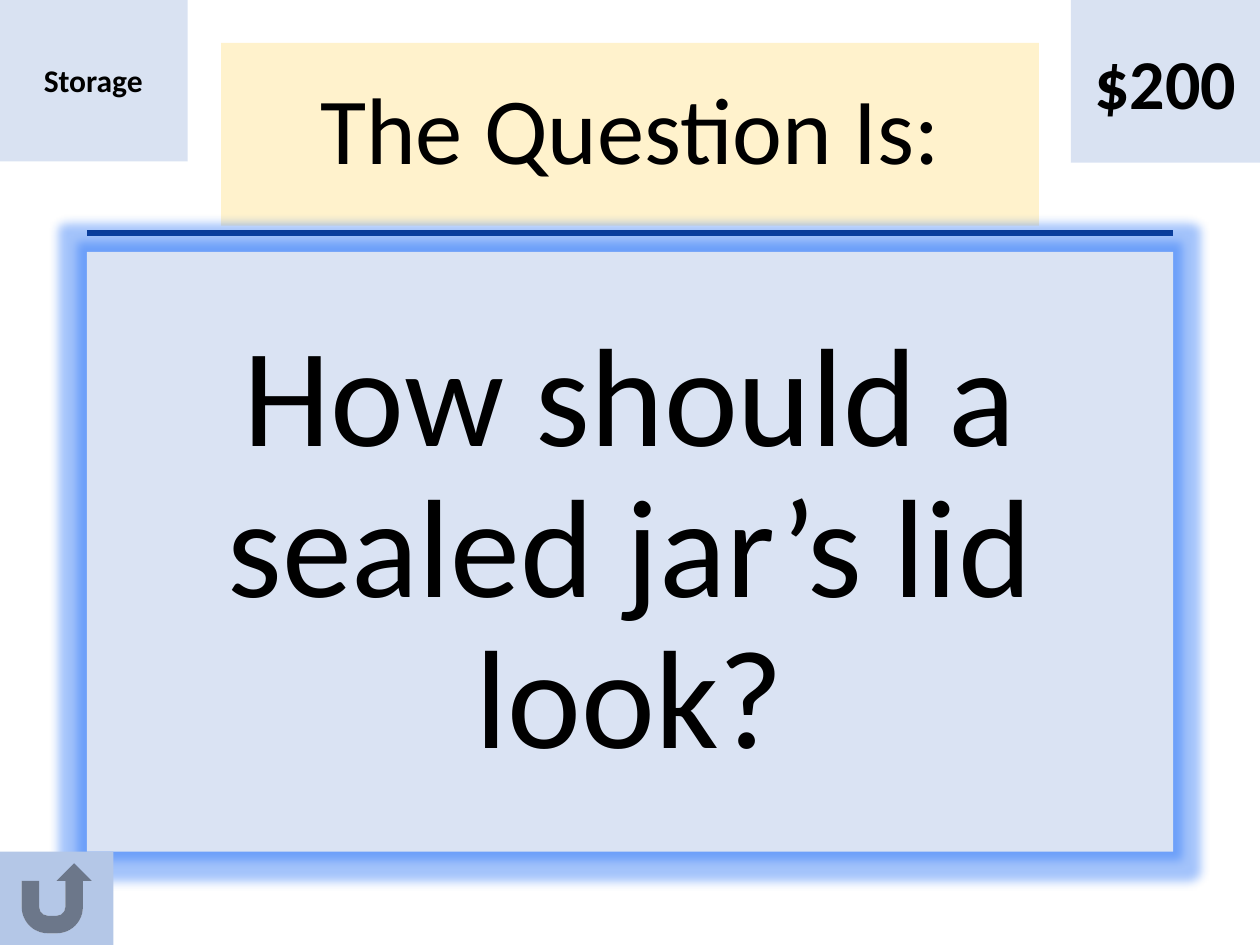
from lxml.etree import SubElement
from pptx import Presentation
from pptx.dml.color import RGBColor
from pptx.enum.shapes import MSO_CONNECTOR, MSO_SHAPE
from pptx.enum.text import MSO_ANCHOR, PP_ALIGN
from pptx.oxml.ns import qn
from pptx.util import Inches, Pt

NAVY = RGBColor(0x00, 0x20, 0x60)
CREAM = RGBColor(0xFF, 0xF2, 0xCC)
PALE_BLUE = RGBColor(0xDA, 0xE3, 0xF3)
BUTTON_BLUE = RGBColor(0xB4, 0xC7, 0xE7)
GLOW_BLUE = RGBColor(0x1B, 0x6B, 0xF7)
BLACK = RGBColor(0x00, 0x00, 0x00)

WIDTH, HEIGHT = 10, 7.5
MARGIN = 0.69
RULE_TOP = 1.85
TITLE_WIDTH = 6.49
BODY_TOP, BODY_HEIGHT = 2, 4.76
BODY_WIDTH = WIDTH - 2 * MARGIN
BODY_BOTTOM = BODY_TOP + BODY_HEIGHT
TAG_WIDTH, TAG_HEIGHT = 1.5, 1.29

PANELS = [
    dict(kind=MSO_SHAPE.RECTANGLE, fill=CREAM, text="The Question Is:",
         box=((WIDTH - TITLE_WIDTH) / 2, 0.34, TITLE_WIDTH, 1.45),
         font=dict(size=Pt(54)), line_spacing=0.9),
    dict(kind=MSO_SHAPE.RECTANGLE, fill=PALE_BLUE, text="How should a sealed jar’s lid look?",
         box=(MARGIN, BODY_TOP, BODY_WIDTH, BODY_HEIGHT),
         font=dict(size=Pt(80)), line_spacing=0.9, glow=True),
    dict(kind=MSO_SHAPE.ACTION_BUTTON_RETURN, fill=BUTTON_BLUE,
         box=(0, BODY_BOTTOM, 0.9, HEIGHT - BODY_BOTTOM)),
    dict(kind=MSO_SHAPE.ACTION_BUTTON_CUSTOM, fill=BUTTON_BLUE, opacity=50, text="Storage",
         box=(-0.01, -0.01, TAG_WIDTH, TAG_HEIGHT),
         font=dict(size=Pt(18), bold=True)),
    dict(kind=MSO_SHAPE.ACTION_BUTTON_CUSTOM, fill=BUTTON_BLUE, opacity=50, text="$200",
         box=(WIDTH - TAG_WIDTH, 0, TAG_WIDTH, TAG_HEIGHT),
         font=dict(size=Pt(40), bold=True)),
]


def set_opacity(color_element, percent):
    SubElement(color_element, qn("a:alpha"), val=str(percent * 1000))


def add_glow(shape, color, radius, percent):
    effects = shape._element.spPr.find(qn("a:effectLst"))
    glow = SubElement(effects, qn("a:glow"), rad=str(radius))
    set_opacity(SubElement(glow, qn("a:srgbClr"), val=str(color)), percent)


def add_rule(slide):
    ends = (MARGIN, RULE_TOP, WIDTH - MARGIN, RULE_TOP)
    rule = slide.shapes.add_connector(MSO_CONNECTOR.STRAIGHT, *map(Inches, ends))
    rule.line.color.rgb = NAVY
    rule.line.width = Pt(3)
    SubElement(rule._element.spPr, qn("a:effectLst"))


def write_text(shape, text, font, line_spacing=None):
    frame = shape.text_frame
    frame.word_wrap = True
    frame.vertical_anchor = MSO_ANCHOR.MIDDLE
    paragraph = frame.paragraphs[0]
    paragraph.text = text
    paragraph.alignment = PP_ALIGN.CENTER
    paragraph.line_spacing = line_spacing
    run_font = paragraph.runs[0].font
    for name, value in dict(name="Calibri", **font).items():
        setattr(run_font, name, value)
    run_font.color.rgb = BLACK


def add_panel(slide, panel):
    shape = slide.shapes.add_shape(panel["kind"], *map(Inches, panel["box"]))
    shape.shadow.inherit = False
    shape.line.fill.background()
    shape.fill.solid()
    shape.fill.fore_color.rgb = panel["fill"]
    if "opacity" in panel:
        fill_color = shape._element.spPr.find(qn("a:solidFill"))[0]
        set_opacity(fill_color, panel["opacity"])
    if panel.get("glow"):
        add_glow(shape, GLOW_BLUE, Pt(11), 40)
    if "text" in panel:
        write_text(shape, panel["text"], panel["font"], panel.get("line_spacing"))


def main():
    presentation = Presentation()
    presentation.slide_width = Inches(WIDTH)
    presentation.slide_height = Inches(HEIGHT)
    slide = presentation.slides.add_slide(presentation.slide_layouts[6])
    add_rule(slide)
    for panel in PANELS:
        add_panel(slide, panel)
    presentation.save("out.pptx")


if __name__ == "__main__":
    main()
